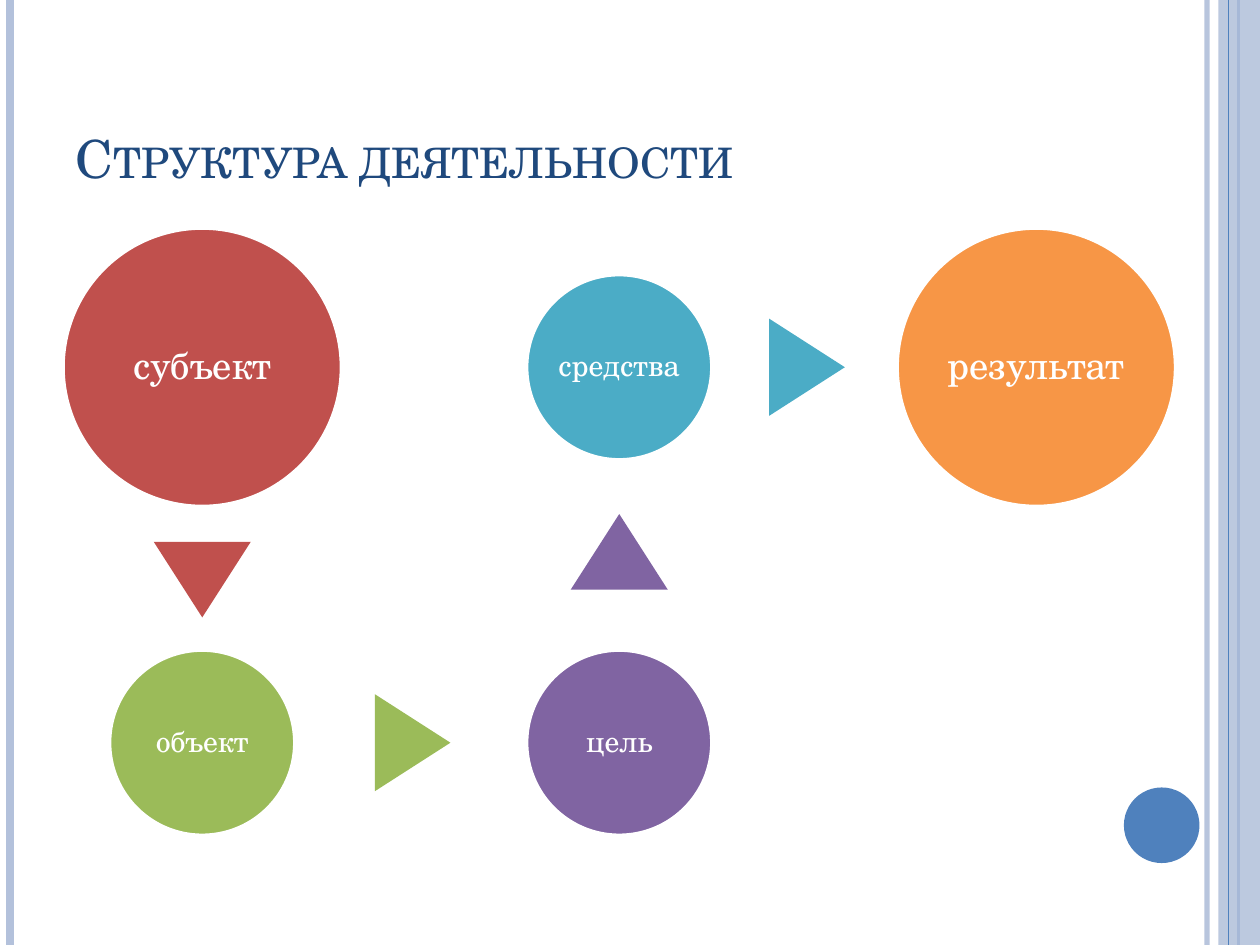
from dataclasses import dataclass

from lxml import etree
from pptx import Presentation
from pptx import util as u
from pptx.dml.color import RGBColor
from pptx.enum import shapes, text
from pptx.oxml import ns


@dataclass(frozen=True)
class Theme:
    """Colours, font and type sizes of the slide."""
    font: str = "TeX Gyre Schola"
    title: str = "1F497D"
    white: str = "FFFFFF"
    pale: str = "B3C1DB"
    blue: str = "4F81BD"
    red: str = "C0504D"
    green: str = "9BBB59"
    purple: str = "8064A2"
    teal: str = "4BACC6"
    orange: str = "F79646"
    title_size: int = 30
    large_size: int = 22
    small_size: int = 17


THEME = Theme()
LARGE, SMALL = 2.21, 1.47
COLUMNS = (1.605, 4.915, 8.225)
ROWS = (2.915, 5.895)


def set_alpha(element, percent):
    """Make the colour inside an element partly transparent."""
    for color in element.iter(ns.qn("a:srgbClr")):
        etree.SubElement(color, ns.qn("a:alpha"), val=str(percent * 1000))


def add_rule(page, x, color, width, alpha=None):
    """Draw a vertical rule over the full height of the page."""
    rule = page.shapes.add_connector(
        shapes.MSO_CONNECTOR.STRAIGHT, u.Inches(x), 0, u.Inches(x), u.Inches(7.5))
    rule.line.color.rgb = RGBColor.from_string(color)
    rule.line.width = u.Pt(width)
    properties = rule._element.spPr
    if alpha:
        set_alpha(properties, alpha)
    etree.SubElement(properties, ns.qn("a:effectLst"))


def add_filled(page, kind, center, size, color):
    """Add a borderless filled shape around a centre point."""
    (x, y), (width, height) = center, size
    shape = page.shapes.add_shape(
        kind, u.Inches(x - width / 2), u.Inches(y - height / 2),
        u.Inches(width), u.Inches(height))
    shape.shadow.inherit = False
    shape.fill.solid()
    shape.fill.fore_color.rgb = RGBColor.from_string(color)
    shape.line.fill.background()
    return shape


def style(para, size, color):
    """Set the type of a paragraph."""
    para.font.name = THEME.font
    para.font.size = u.Pt(size)
    para.font.color.rgb = RGBColor.from_string(color)


def add_circle(page, label, center, diameter, color):
    """Add a labelled circle with a white outline."""
    circle = add_filled(page, shapes.MSO_SHAPE.OVAL, center, (diameter, diameter), color)
    circle.line.color.rgb = RGBColor.from_string(THEME.white)
    circle.line.width = u.Pt(2)
    frame = circle.text_frame
    frame.word_wrap = True
    frame.vertical_anchor = text.MSO_ANCHOR.MIDDLE
    inset = u.Inches(0.03 if diameter == LARGE else 0.02)
    frame.margin_left = frame.margin_right = inset
    frame.margin_top = frame.margin_bottom = inset
    para = frame.paragraphs[0]
    para.text = label
    para.alignment = text.PP_ALIGN.CENTER
    para.line_spacing = 0.9
    style(para, THEME.large_size if diameter == LARGE else THEME.small_size, THEME.white)


def add_pointer(page, center, rotation, color):
    """Add a triangle pointing to the next circle."""
    pointer = add_filled(
        page, shapes.MSO_SHAPE.ISOSCELES_TRIANGLE, center, (0.77, 0.6), color)
    pointer.rotation = rotation


def add_title(page, title):
    """Add the title in small capitals."""
    box = page.shapes.add_textbox(
        u.Inches(0.5), u.Inches(0.3), u.Inches(8.17), u.Inches(1.25))
    frame = box.text_frame
    frame.word_wrap = True
    frame.vertical_anchor = text.MSO_ANCHOR.BOTTOM
    para = frame.paragraphs[0]
    para.text = title
    style(para, THEME.title_size, THEME.title)
    for properties in para._p.iter(ns.qn("a:defRPr")):
        properties.set("cap", "small")


def add_frame(page):
    """Draw the rules, side band and dot around the content."""
    add_rule(page, 9.58, THEME.pale, 3, 93)
    add_rule(page, 0.08, THEME.pale, 4.5)
    add_rule(page, 9.83, THEME.blue, 1.5)
    band = add_filled(
        page, shapes.MSO_SHAPE.RECTANGLE, (9.835, 3.75), (0.33, 7.5), THEME.pale)
    set_alpha(band._element.spPr, 87)
    add_rule(page, 9.75, THEME.blue, 0.75)
    add_filled(page, shapes.MSO_SHAPE.OVAL, (9.22, 6.55), (0.6, 0.6), THEME.blue)


def main():
    """Build and save the slide."""
    deck = Presentation()
    deck.slide_width, deck.slide_height = u.Inches(10), u.Inches(7.5)
    page = deck.slides.add_slide(deck.slide_layouts[6])
    add_frame(page)
    add_title(page, "Структура деятельности")
    left, middle, right = COLUMNS
    top, bottom = ROWS
    steps = (
        ("субъект", (left, top), LARGE, THEME.red, (left, 4.6), 180),
        ("объект", (left, bottom), SMALL, THEME.green, (3.275, bottom), 90),
        ("цель", (middle, bottom), SMALL, THEME.purple, (middle, 4.38), 0),
        ("средства", (middle, top), SMALL, THEME.teal, (6.405, top), 90),
        ("результат", (right, top), LARGE, THEME.orange, None, None),
    )
    for label, center, diameter, color, pointer, rotation in steps:
        add_circle(page, label, center, diameter, color)
        if pointer:
            add_pointer(page, pointer, rotation, color)
    deck.save("out.pptx")


if __name__ == "__main__":
    main()
